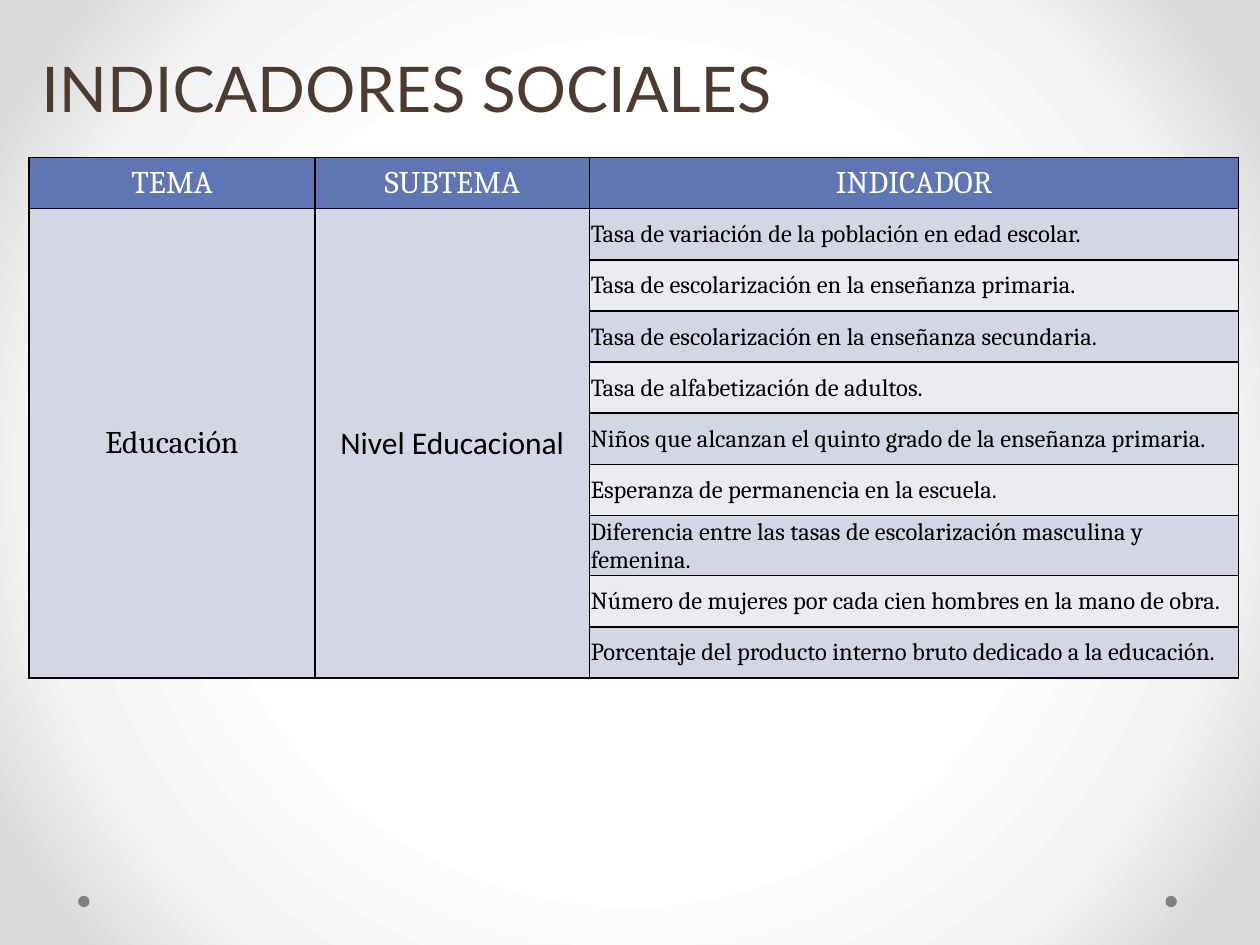
from pptx import Presentation
from pptx.dml.color import RGBColor
from pptx.enum.shapes import MSO_SHAPE
from pptx.enum.text import MSO_ANCHOR, PP_ALIGN
from pptx.oxml import parse_xml
from pptx.oxml.ns import nsdecls, qn
from pptx.util import Inches, Pt

WIDTH, HEIGHT = 10, 7.5
LEFT = 0.23
COLUMNS = (2.27, 2.18, 5.15)
TABLE_TOP, TABLE_HEIGHT = 1.25, 4.06
HEADER_FILL = "6076B4"
BANDS = ("D2D6E5", "EAECF2")
BLACK, WHITE = "000000", "FFFFFF"
GLOW = ((50, "FFFFFF"), (76, "F4F4F4"), (92, "DADADA"))

HEADERS = ("TEMA", "SUBTEMA", "INDICADOR")
INDICATORS = (
    "Tasa de variación de la población en edad escolar.",
    "Tasa de escolarización en la enseñanza primaria.",
    "Tasa de escolarización en la enseñanza secundaria.",
    "Tasa de alfabetización de adultos.",
    "Niños que alcanzan el quinto grado de la enseñanza primaria.",
    "Esperanza de permanencia en la escuela.",
    "Diferencia entre las tasas de escolarización masculina y femenina.",
    "Número de mujeres por cada cien hombres en la mano de obra.",
    "Porcentaje del producto interno bruto dedicado a la educación.",
)


def rgb(value):
    return RGBColor.from_string(value)


def write(paragraph, text, size, color, font="Cambria", align=PP_ALIGN.LEFT):
    paragraph.text = text
    paragraph.alignment = align
    paragraph.font.name = font
    paragraph.font.size = Pt(size)
    paragraph.font.color.rgb = rgb(color)


def paint_background(slide):
    """Fill the slide with a gradient that spreads from its centre."""
    slide.background.fill.gradient()
    gradient = slide.element.find(".//" + qn("a:gradFill"))
    stops = "".join(
        f'<a:gs pos="{share * 1000}"><a:srgbClr val="{color}"/></a:gs>'
        for share, color in GLOW
    )
    gradient.getparent().replace(gradient, parse_xml(
        f'<a:gradFill {nsdecls("a")} rotWithShape="1"><a:gsLst>{stops}</a:gsLst>'
        '<a:path path="circle"><a:fillToRect l="50000" t="50000" r="50000" b="50000"/>'
        '</a:path></a:gradFill>'
    ))


def add_dot(slide, left):
    dot = slide.shapes.add_shape(
        MSO_SHAPE.OVAL, Inches(left), Inches(7.11), Inches(0.09), Inches(0.09)
    )
    dot.shadow.inherit = False
    dot.fill.solid()
    dot.fill.fore_color.rgb = rgb("808080")
    dot.line.fill.background()


def add_title(slide, text):
    title = slide.shapes.add_textbox(
        Inches(LEFT), Inches(0.23), Inches(0.95 * WIDTH), Inches(0.92)
    ).text_frame
    title.word_wrap = True
    title.vertical_anchor = MSO_ANCHOR.MIDDLE
    write(title.paragraphs[0], text, 36, "4E3B30", "Lato")


def style_cell(cell, fill, tight):
    """Set borders, fill and anchor; a tight cell has almost no margins."""
    properties = cell._tc.get_or_add_tcPr()
    for side in ("lnL", "lnR", "lnT", "lnB"):
        properties.append(parse_xml(
            f'<a:{side} {nsdecls("a")} w="{Pt(1)}"><a:solidFill>'
            f'<a:srgbClr val="{BLACK}"/></a:solidFill></a:{side}>'
        ))
    cell.fill.solid()
    cell.fill.fore_color.rgb = rgb(fill)
    cell.vertical_anchor = MSO_ANCHOR.MIDDLE
    if tight:
        cell.margin_left = cell.margin_right = cell.margin_top = Inches(0.01)
        cell.margin_bottom = 0


def add_indicator_table(slide):
    rows = len(INDICATORS) + 1
    table = slide.shapes.add_table(
        rows, len(COLUMNS), Inches(LEFT), Inches(TABLE_TOP),
        Inches(sum(COLUMNS)), Inches(TABLE_HEIGHT),
    ).table
    table.first_row = table.horz_banding = False
    for column, width in zip(table.columns, COLUMNS):
        column.width = Inches(width)

    for index, header in enumerate(HEADERS):
        cell = table.cell(0, index)
        style_cell(cell, HEADER_FILL, tight=True)
        write(cell.text_frame.paragraphs[0], header, 18, WHITE, align=PP_ALIGN.CENTER)

    for row, indicator in enumerate(INDICATORS, start=1):
        for index in range(2):
            style_cell(table.cell(row, index), BANDS[0], tight=False)
        cell = table.cell(row, 2)
        style_cell(cell, BANDS[(row - 1) % 2], tight=True)
        write(cell.text_frame.paragraphs[0], indicator, 14, BLACK)

    topics = (("Educación", "Cambria"), ("Nivel Educacional", "Calibri"))
    for index, (topic, font) in enumerate(topics):
        cell = table.cell(1, index)
        cell.merge(table.cell(rows - 1, index))
        write(cell.text_frame.paragraphs[0], topic, 18, BLACK, font, PP_ALIGN.CENTER)


def main():
    presentation = Presentation()
    presentation.slide_width = Inches(WIDTH)
    presentation.slide_height = Inches(HEIGHT)
    slide = presentation.slides.add_slide(presentation.slide_layouts[6])
    paint_background(slide)
    for left in (9.25, 0.62):
        add_dot(slide, left)
    add_title(slide, "INDICADORES SOCIALES")
    add_indicator_table(slide)
    presentation.save("out.pptx")


if __name__ == "__main__":
    main()
